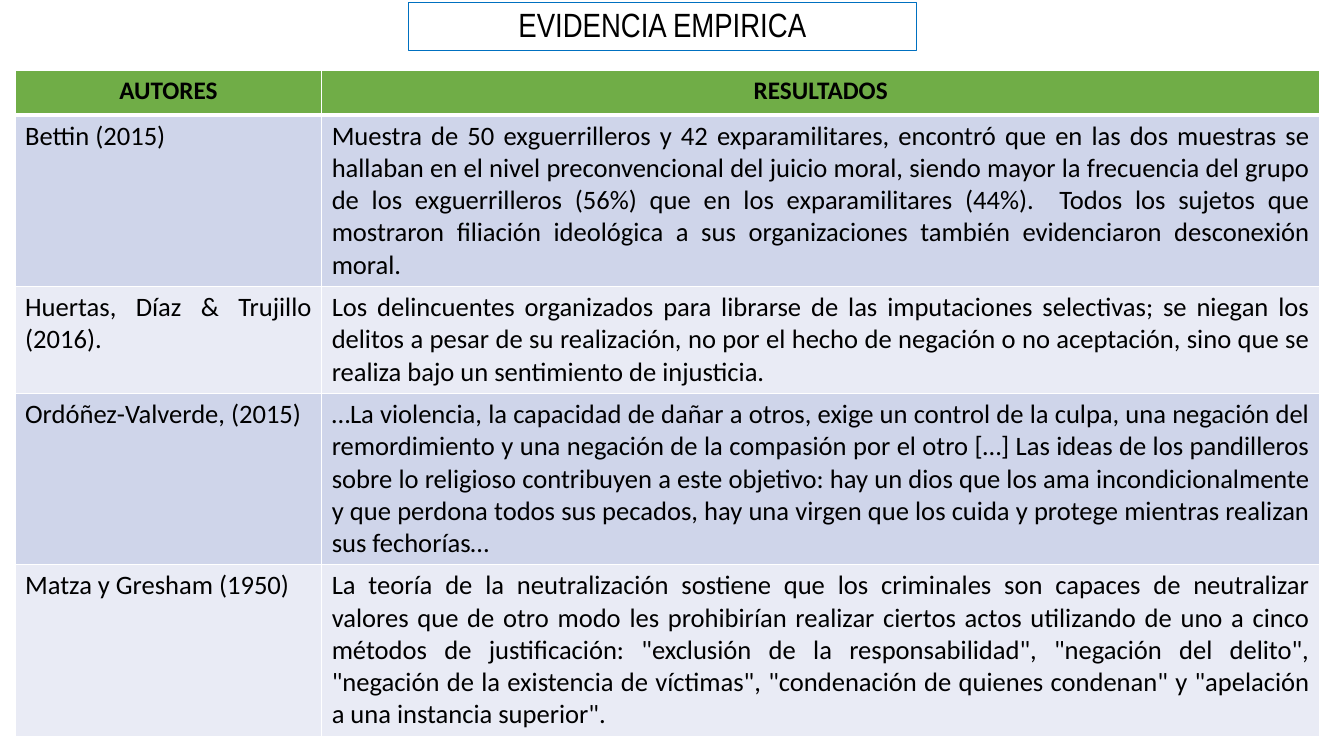
import dataclasses

import pptx
import pptx.dml.color
import pptx.enum.shapes
import pptx.enum.text
import pptx.oxml
import pptx.oxml.ns
import pptx.util

Inches = pptx.util.Inches
Pt = pptx.util.Pt
Align = pptx.enum.text.PP_ALIGN


@dataclasses.dataclass(frozen=True)
class Theme:
    title_font: str = "Arial Narrow"
    body_font: str = "Calibri"
    title_size: float = 24
    header_size: float = 18
    body_size: float = 19
    ink: str = "000000"
    paper: str = "FFFFFF"
    title_line: str = "0070C0"
    header_fill: str = "70AD47"
    bands: tuple = ("CFD5EA", "E9EBF5")
    thin_border: float = 1
    thick_border: float = 3


THEME = Theme()

TITLE = "EVIDENCIA EMPIRICA"
HEADERS = ("AUTORES", "RESULTADOS")
# Author, result, author alignment, row height
STUDIES = (
    ("Bettin (2015)",
     "Muestra de 50 exguerrilleros y 42 exparamilitares, encontró que en las dos "
     "muestras se hallaban en el nivel preconvencional del juicio moral, siendo mayor "
     "la frecuencia del grupo de los exguerrilleros (56%) que en los exparamilitares "
     "(44%).  Todos los sujetos que mostraron filiación ideológica a sus "
     "organizaciones también evidenciaron desconexión moral.",
     Align.LEFT, 1.7),
    ("Huertas, Díaz & Trujillo (2016).",
     "Los delincuentes organizados para librarse de las imputaciones selectivas; se "
     "niegan los delitos a pesar de su realización, no por el hecho de negación o no "
     "aceptación, sino que se realiza bajo un sentimiento de injusticia.",
     Align.JUSTIFY, 1.06),
    ("Ordóñez-Valverde, (2015)",
     "…La violencia, la capacidad de dañar a otros, exige un control de la culpa, una "
     "negación del remordimiento y una negación de la compasión por el otro […] Las "
     "ideas de los pandilleros sobre lo religioso contribuyen a este objetivo: hay un "
     "dios que los ama incondicionalmente y que perdona todos sus pecados, hay una "
     "virgen que los cuida y protege mientras realizan sus fechorías…",
     Align.LEFT, 1.7),
    ("Matza y Gresham (1950)",
     "La teoría de la neutralización sostiene que los criminales son capaces de "
     "neutralizar valores que de otro modo les prohibirían realizar ciertos actos "
     "utilizando de uno a cinco métodos de justificación: \"exclusión de la "
     "responsabilidad\", \"negación del delito\", \"negación de la existencia de "
     "víctimas\", \"condenación de quienes condenan\" y \"apelación a una instancia "
     "superior\".",
     Align.LEFT, 1.7),
)
HEADER_HEIGHT = 0.44
AUTHOR_SHARE = 0.235


def color(value):
    return pptx.dml.color.RGBColor.from_string(value)


def write(frame, text, align, font, size, bold=False):
    frame.text = text
    para = frame.paragraphs[0]
    para.alignment = align
    para.font.name = font
    para.font.size = Pt(size)
    para.font.bold = bold
    para.font.color.rgb = color(THEME.ink)
    return para


def add_borders(cell, top, bottom):
    """Draw the four cell borders; the schema wants them before the fill."""
    properties = cell._tc.get_or_add_tcPr()
    sides = {"L": THEME.thin_border, "R": THEME.thin_border, "T": top, "B": bottom}
    for place, (side, width) in enumerate(sides.items()):
        properties.insert(place, pptx.oxml.parse_xml(
            f'<a:ln{side} {pptx.oxml.ns.nsdecls("a")} w="{Pt(width)}"><a:solidFill>'
            f'<a:srgbClr val="{THEME.paper}"/></a:solidFill></a:ln{side}>'))


def add_title(page, left, top, width, height):
    box = page.shapes.add_shape(
        pptx.enum.shapes.MSO_SHAPE.RECTANGLE,
        Inches(left), Inches(top), Inches(width), Inches(height))
    box.shadow.inherit = False
    box.fill.background()
    box.line.color.rgb = color(THEME.title_line)
    box.line.width = Pt(0.75)
    frame = box.text_frame
    frame.word_wrap = True
    frame.vertical_anchor = pptx.enum.text.MSO_ANCHOR.MIDDLE
    para = write(frame, TITLE, Align.CENTER, THEME.title_font, THEME.title_size)
    para.line_spacing = 0.9


def add_evidence_table(page, left, top, width):
    heights = [HEADER_HEIGHT] + [study[3] for study in STUDIES]
    table = page.shapes.add_table(
        len(heights), len(HEADERS), Inches(left), Inches(top),
        Inches(width), Inches(sum(heights))).table
    for column, share in zip(table.columns, (AUTHOR_SHARE, 1 - AUTHOR_SHARE)):
        column.width = Inches(width * share)
    for row, height in zip(table.rows, heights):
        row.height = Inches(height)

    # Header row
    for cell, header in zip(table.rows[0].cells, HEADERS):
        write(cell.text_frame, header, Align.CENTER,
              THEME.body_font, THEME.header_size, bold=True)
        cell.fill.solid()
        cell.fill.fore_color.rgb = color(THEME.header_fill)
        add_borders(cell, THEME.thin_border, THEME.thick_border)

    # One banded row per study
    for index, (author, result, author_align, _) in enumerate(STUDIES):
        texts = ((author, author_align), (result, Align.JUSTIFY))
        for cell, (text, align) in zip(table.rows[index + 1].cells, texts):
            write(cell.text_frame, text, align, THEME.body_font, THEME.body_size)
            cell.fill.solid()
            cell.fill.fore_color.rgb = color(THEME.bands[index % 2])
            add_borders(cell, THEME.thin_border if index else THEME.thick_border,
                        THEME.thin_border)


def main():
    deck = pptx.Presentation()
    deck.slide_width = Inches(13.33)
    deck.slide_height = Inches(7.5)
    page = deck.slides.add_slide(deck.slide_layouts[6])
    page.background.fill.solid()
    page.background.fill.fore_color.rgb = color(THEME.paper)
    add_title(page, 4.05, 0.03, 5.04, 0.47)
    add_evidence_table(page, 0.15, 0.7, 12.94)
    deck.save("out.pptx")


if __name__ == "__main__":
    main()
